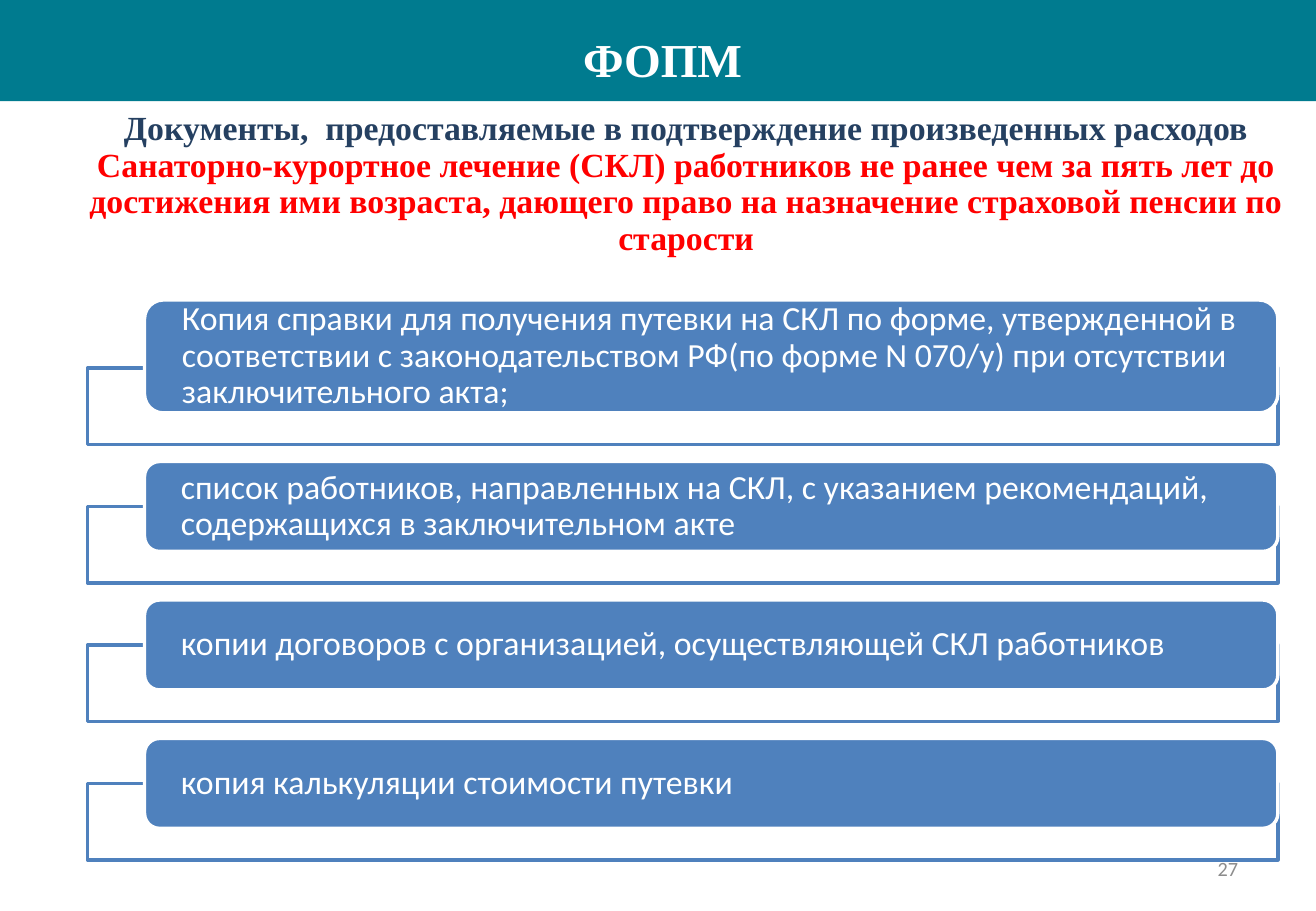
from dataclasses import dataclass

from lxml import etree
from pptx import Presentation
from pptx.dml.color import RGBColor
from pptx.enum.shapes import MSO_SHAPE
from pptx.enum.text import MSO_ANCHOR, PP_ALIGN
from pptx.oxml.ns import qn
from pptx.util import Pt

RECTANGLE = MSO_SHAPE.RECTANGLE
ROUNDED = MSO_SHAPE.ROUNDED_RECTANGLE
TOP, MIDDLE = MSO_ANCHOR.TOP, MSO_ANCHOR.MIDDLE
LEFT, CENTER, RIGHT = PP_ALIGN.LEFT, PP_ALIGN.CENTER, PP_ALIGN.RIGHT
TITLE_ONLY = 5

SLIDE_WIDTH, SLIDE_HEIGHT = 780, 540

# Document list: equal steps, each bar ends a fixed distance below its frame's top
FRAME_LEFT, FRAME_TOP = 51.84, 218.16
FRAME_WIDTH, FRAME_HEIGHT = 705.6, 45.36
FRAME_STEP = 82.08
BAR_LEFT, BAR_WIDTH = 85.68, 671.76
BAR_DROP = 26.64
BAR_HEIGHT, TALL_BAR_HEIGHT = 53.28, 66.96

DOCUMENTS = [
    ("Копия справки для получения путевки на СКЛ по форме, утвержденной в "
     "соответствии с законодательством РФ(по форме N 070/у) при отсутствии "
     "заключительного акта;", TALL_BAR_HEIGHT),
    ("список работников, направленных на СКЛ, с указанием рекомендаций, "
     "содержащихся в заключительном акте", BAR_HEIGHT),
    ("копии договоров с организацией, осуществляющей СКЛ работников", BAR_HEIGHT),
    ("копия калькуляции стоимости путевки", BAR_HEIGHT),
]


@dataclass(frozen=True)
class Theme:
    band: RGBColor = RGBColor(0x00, 0x7B, 0x8F)
    bar: RGBColor = RGBColor(0x4F, 0x81, 0xBD)
    white: RGBColor = RGBColor(0xFF, 0xFF, 0xFF)
    navy: RGBColor = RGBColor(0x25, 0x40, 0x61)
    red: RGBColor = RGBColor(0xFF, 0x00, 0x00)
    gray: RGBColor = RGBColor(0x8C, 0x8C, 0x8C)
    heading_font: str = "Times New Roman"
    body_font: str = "Calibri"
    title_size: int = 28
    body_size: int = 20
    number_size: int = 12
    line_width: int = 2
    line_spacing: float = 0.9


class SlideBuilder:
    def __init__(self, presentation, theme):
        self.theme = theme
        self.slide = presentation.slides.add_slide(
            presentation.slide_layouts[TITLE_ONLY])

    def set_text(self, shape, lines, font, size, align, bold=False, anchor=TOP,
                 margins=(7.2, 3.6, 7.2, 3.6), spacing=1.0):
        """Fill a shape with (text, color) paragraphs."""
        frame = shape.text_frame
        frame.word_wrap = True
        frame.vertical_anchor = anchor
        (frame.margin_left, frame.margin_top,
         frame.margin_right, frame.margin_bottom) = map(Pt, margins)
        for index, (text, color) in enumerate(lines):
            paragraph = frame.add_paragraph() if index else frame.paragraphs[0]
            paragraph.text = text
            paragraph.alignment = align
            paragraph.line_spacing = spacing
            paragraph.font.name = font
            paragraph.font.size = Pt(size)
            paragraph.font.bold = bold
            paragraph.font.color.rgb = color

    def box(self, kind, left, top, width, height, fill, line=None, opacity=100):
        shape = self.slide.shapes.add_shape(
            kind, Pt(left), Pt(top), Pt(width), Pt(height))
        shape.shadow.inherit = False
        shape.fill.solid()
        shape.fill.fore_color.rgb = fill
        if opacity < 100:
            color = shape.element.spPr.find(qn("a:solidFill"))[0]
            etree.SubElement(color, qn("a:alpha"), val=str(opacity * 1000))
        if line is None:
            shape.line.fill.background()
        else:
            shape.line.color.rgb = line
            shape.line.width = Pt(self.theme.line_width)
        return shape

    def text(self, left, top, width, height, lines, font, size, align, **style):
        shape = self.slide.shapes.add_textbox(
            Pt(left), Pt(top), Pt(width), Pt(height))
        self.set_text(shape, lines, font, size, align, **style)

    def title(self, text, left, top, width, height, band_height):
        theme = self.theme
        title = self.slide.shapes.title
        title.left, title.top = Pt(left), Pt(top)
        title.width, title.height = Pt(width), Pt(height)
        self.set_text(title, [(text, theme.white)], theme.heading_font,
                      theme.title_size, LEFT, bold=True)
        band = self.box(RECTANGLE, 0, 0, SLIDE_WIDTH, band_height, theme.band)
        title.element.addprevious(band.element)  # band goes behind the title

    def document(self, text, frame_top, bar_height):
        theme = self.theme
        self.box(RECTANGLE, FRAME_LEFT, frame_top, FRAME_WIDTH, FRAME_HEIGHT,
                 theme.white, theme.bar, opacity=90)
        bar = self.box(ROUNDED, BAR_LEFT, frame_top + BAR_DROP - bar_height,
                       BAR_WIDTH, bar_height, theme.bar, theme.white)
        self.set_text(bar, [(text, theme.white)], theme.body_font,
                      theme.body_size, LEFT, anchor=MIDDLE,
                      margins=(18.9, 0, 18.9, 0), spacing=theme.line_spacing)


def main():
    presentation = Presentation()
    presentation.slide_width = Pt(SLIDE_WIDTH)
    presentation.slide_height = Pt(SLIDE_HEIGHT)
    theme = Theme()
    builder = SlideBuilder(presentation, theme)

    # Title band
    builder.title("ФОПМ", 338.4, 14.4, 409, 41, band_height=60)

    # Heading
    builder.text(
        0, 63.36, 771, 93.6,
        [("Документы,  предоставляемые в подтверждение произведенных расходов",
          theme.navy),
         ("Санаторно-курортное лечение (СКЛ) работников не ранее чем за пять лет "
          "до достижения ими возраста, дающего право на назначение страховой "
          "пенсии по старости", theme.red)],
        theme.heading_font, theme.body_size, CENTER, bold=True,
        margins=(48.2, 2.9, 5.8, 2.9), spacing=theme.line_spacing)

    # Document list
    for index, (text, bar_height) in enumerate(DOCUMENTS):
        builder.document(text, FRAME_TOP + index * FRAME_STEP, bar_height)

    # Page number
    builder.text(558.7, 500.4, 182.2, 28.8, [("27", theme.gray)],
                 theme.body_font, theme.number_size, RIGHT, anchor=MIDDLE)

    presentation.save("out.pptx")


if __name__ == "__main__":
    main()
